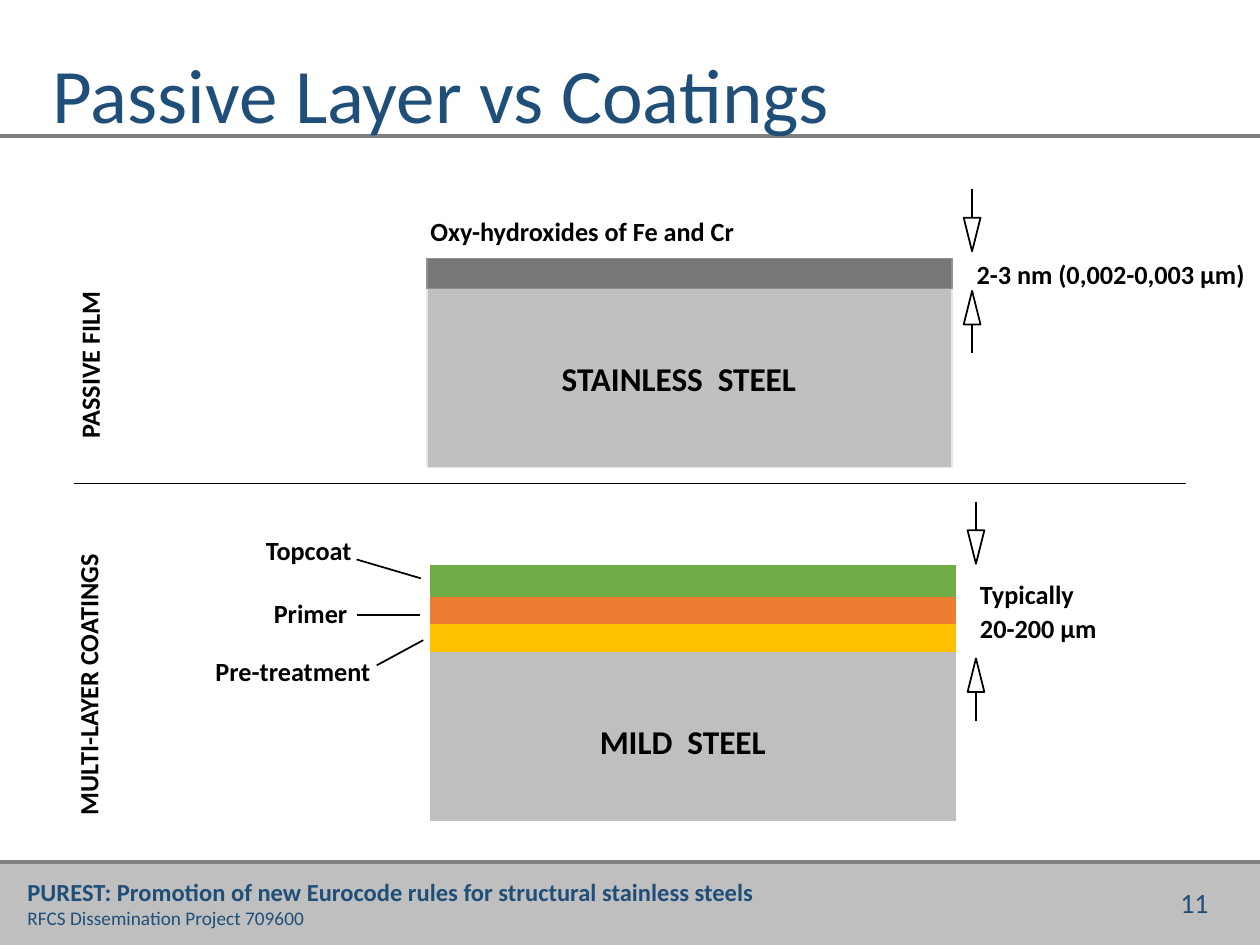
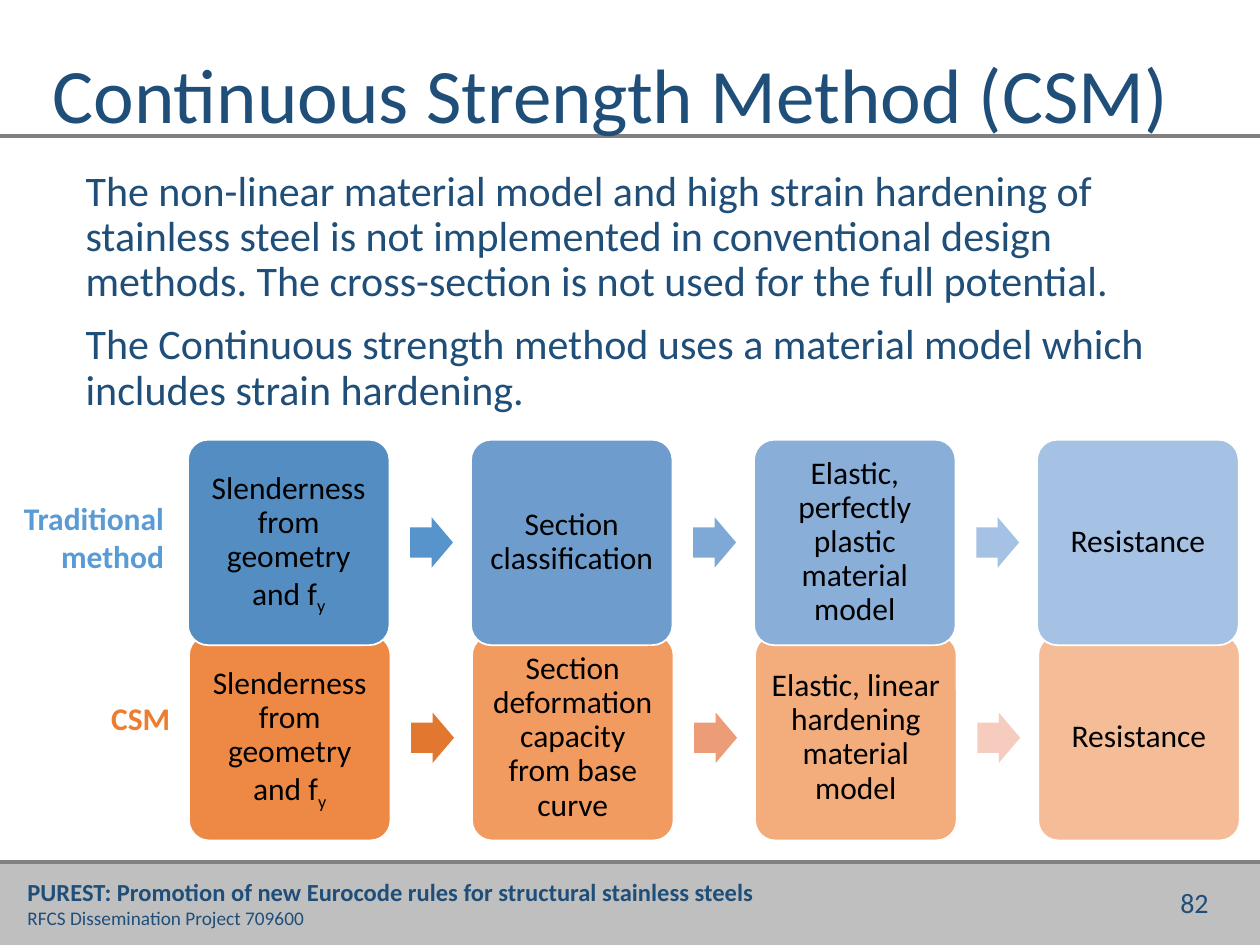
from dataclasses import dataclass

from lxml import etree
from pptx import Presentation
from pptx.dml.color import RGBColor
from pptx.enum.shapes import MSO_CONNECTOR, MSO_SHAPE
from pptx.enum.text import MSO_ANCHOR, MSO_AUTO_SIZE, PP_ALIGN
from pptx.oxml.ns import qn
from pptx.util import Pt

LEFT, CENTER, RIGHT = PP_ALIGN.LEFT, PP_ALIGN.CENTER, PP_ALIGN.RIGHT
TOP, MIDDLE = MSO_ANCHOR.TOP, MSO_ANCHOR.MIDDLE
FIT = MSO_AUTO_SIZE.SHAPE_TO_FIT_TEXT
STRAIGHT = MSO_CONNECTOR.STRAIGHT
RECT, ROUNDED, ARROW = MSO_SHAPE.RECTANGLE, MSO_SHAPE.ROUNDED_RECTANGLE, MSO_SHAPE.RIGHT_ARROW


@dataclass(frozen=True)
class Theme:
    font: str = "Calibri"
    navy: str = "1F4E79"
    black: str = "000000"
    white: str = "FFFFFF"
    band: str = "BFBFBF"
    rule: str = "808080"
    blue: str = "5B9BD5"
    orange: str = "ED7D31"
    title: int = 44
    body: int = 24
    steel: int = 19
    flow: int = 18
    page: int = 16
    label: int = 15
    footer: int = 14
    small: int = 11


T = Theme()
WIDTH, HEIGHT = 720, 540


def rgb(value):
    return RGBColor.from_string(value)


def apply(target, formats):
    for name, value in formats.items():
        setattr(target, name, value)


def add_run(p, text, size, color, bold=False):
    r = p.add_run()
    r.text = text
    apply(r.font, {"name": T.font, "size": Pt(size), "bold": bold})
    r.font.color.rgb = rgb(color)
    return r


def frame_text(sp, inset=None, wrap=True, anchor=TOP, fit=None):
    tf = sp.text_frame
    apply(tf, {"word_wrap": wrap, "vertical_anchor": anchor})
    if inset is not None:
        sides = ("left", "right", "top", "bottom")
        apply(tf, {f"margin_{side}": Pt(inset) for side in sides})
    if fit is not None:
        tf.auto_size = fit
    return tf


def write(tf, lines, size, color, bold=False, **formats):
    for i, line in enumerate(lines):
        p = tf.paragraphs[0] if i == 0 else tf.add_paragraph()
        apply(p, formats)
        add_run(p, line, size, color, bold)


def text_box(s, box, lines, size, color, bold=False, wrap=True, **formats):
    sp = s.shapes.add_textbox(*map(Pt, box))
    tf = frame_text(sp, wrap=wrap)
    write(tf, lines, size, color, bold, **formats)
    return tf


def paint(sp, fill, line=None, width=0.75):
    sp.shadow.inherit = False
    sp.fill.solid()
    sp.fill.fore_color.rgb = rgb(fill)
    if line:
        sp.line.color.rgb = rgb(line)
        sp.line.width = Pt(width)
    else:
        sp.line.fill.background()


def shape(s, kind, box, fill, line=None, width=0.75):
    sp = s.shapes.add_shape(kind, *map(Pt, box))
    paint(sp, fill, line, width)
    return sp


def rule(s, x1, y1, x2, y2, color=T.black, width=1):
    c = s.shapes.add_connector(STRAIGHT, Pt(x1), Pt(y1), Pt(x2), Pt(y2))
    c.line.color.rgb = rgb(color)
    c.line.width = Pt(width)
    etree.SubElement(c._element.spPr, qn("a:effectLst"))


def base_slide(prs, title, number):
    s = prs.slides.add_slide(prs.slide_layouts[6])
    band_top = 492.5
    shape(s, RECT, (0, band_top, WIDTH, HEIGHT - band_top), T.band, T.band, 1)
    tf = text_box(s, (8.6, 497.5, 433, 37.5),
                  ["PUREST: Promotion of new Eurocode rules for structural stainless steels"],
                  T.footer, T.navy, True, wrap=False)
    add_run(tf.add_paragraph(), "RFCS Dissemination Project 709600", T.small, T.navy)
    text_box(s, (535.7, 502.5, 162, 29), [str(number)], T.page, T.navy, alignment=RIGHT)
    for y in (band_top, 77.8):
        rule(s, 0, y, WIDTH, y, T.rule, 2)
    text_box(s, (23, 28.8, 673, 49), [title], T.title, T.navy, line_spacing=0.9)
    return s


def label(s, box, text, align=CENTER, size=T.label, fill=T.white, rotation=0):
    sp = s.shapes.add_textbox(*map(Pt, box))
    if fill:
        sp.fill.solid()
        sp.fill.fore_color.rgb = rgb(fill)
    sp.rotation = rotation
    tf = frame_text(sp, inset=0, wrap=False, fit=FIT)
    write(tf, [text], size, T.black, True, alignment=align)


def gauge_arrow(s, x, tail, direction):
    tip = tail + 35.6 * direction
    base = tip - 19.2 * direction
    rule(s, x, tail, x, base)
    outline = s.shapes.build_freeform(Pt(x - 4.8), Pt(base))
    outline.add_line_segments([(Pt(x), Pt(tip)), (Pt(x + 4.8), Pt(base))], close=True)
    paint(outline.convert_to_shape(), T.white, T.black, 1)


def steel_panel(s, box, panel):
    x, y, w, h = box
    shape(s, RECT, box, panel["fill"], panel["edge"])
    for i, (fill, edge) in enumerate(panel["layers"]):
        shape(s, RECT, (x, y - 15.85 * i, w, 17.3), fill, edge)
    label(s, (x + w / 2 - 96, y + 57, 180, 23), panel["steel"], size=T.steel, fill=None)
    text, dx, mid, length = panel["side"]
    label(s, (x + dx - length / 2, y + mid - 9, length, 18), text, rotation=270)
    for text, dx, dy, width, align in panel["labels"]:
        label(s, (x + dx, y + dy, width, 18), text, align)
    for x1, y1, x2, y2 in panel["leaders"]:
        rule(s, x + x1, y + y1, x + x2, y + y2)
    for tail, direction in zip(panel["tails"], (1, -1)):
        gauge_arrow(s, x + 311.5, y + tail, direction)


PASSIVE_FILM = {
    "fill": "C0C0C0", "edge": "E6E6E6",
    "layers": [("777777", "919191")],
    "steel": "STAINLESS  STEEL",
    "side": ("PASSIVE FILM", -193, 61, 85),
    "labels": [("Oxy-hydroxides of Fe and Cr", 2, -24.5, 207, LEFT),
               ("2-3 nm (0,002-0,003 µm)", 305.4, 0, 170.6, CENTER)],
    "leaders": [],
    "tails": (-39.6, 54.2),
}
COATINGS = {
    "fill": T.band, "edge": "C0C0C0",
    "layers": [(c, c) for c in ("FFC000", T.orange, "70AD47")],
    "steel": "MILD  STEEL",
    "side": ("MULTI-LAYER COATINGS", -196, 36.3, 150.5),
    "labels": [("Topcoat", -95, -49.7, 49.7, RIGHT),
               ("Primer", -92.8, -13.7, 48.2, CENTER),
               ("Pre-treatment", -123.8, 19.4, 89.3, RIGHT),
               ("Typically", 308.9, -24.5, 63.4, CENTER),
               ("20-200 µm", 310.4, -5, 73.4, CENTER)],
    "leaders": [(-42.4, -35.3, -5.7, -24.5),
                (-42.4, -3.6, -6.4, -3.6),
                (-30.9, 25.2, -4.3, 10.8)],
    "tails": (-68.4, 56.8),
}


def coatings_slide(prs):
    s = base_slide(prs, "Passive Layer vs Coatings", 11)
    steel_panel(s, (244, 147.6, 300, 119.5), PASSIVE_FILM)
    steel_panel(s, (246.2, 355, 300, 113.8), COATINGS)
    rule(s, 42.5, 276.5, 677.5, 276.5, width=0.5)


def set_alpha(sp, percent):
    color = sp._element.spPr.find(qn("a:solidFill"))[0]
    etree.SubElement(color, qn("a:alpha")).set("val", str(percent * 1000))


def flow_row(s, box, row):
    x, y, w, h = box
    step = 161.75
    for i, (text, subscript) in enumerate(row["steps"]):
        left = x + step * i
        card = shape(s, ROUNDED, (left, y, w, h), row["cards"][i], T.white, 1)
        card.adjustments[0] = 0.1
        if row["alphas"]:
            set_alpha(card, row["alphas"][i])
        tf = frame_text(card, inset=5, anchor=MIDDLE)
        write(tf, [text], T.flow, T.black, alignment=CENTER, line_spacing=0.9)
        if subscript:
            r = add_run(tf.paragraphs[0], subscript, T.flow, T.black)
            r.font._element.set("baseline", "-25000")
        if i < len(row["arrows"]):
            arrow = shape(s, ARROW, (left + 127, y + 44.3, 24.5, 28.8), row["arrows"][i])
            arrow.adjustments[0] = 0.6
            arrow.adjustments[1] = 0.5
    dx, dy = row["name_offset"]
    text_box(s, (x + dx, y + dy, 100.8, 28.8), row["name"], T.flow, row["color"],
             True, alignment=RIGHT)


SLENDERNESS = ("Slenderness from geometry and f", "y")
CSM = {
    "name": ["CSM"], "color": T.orange, "name_offset": (-104.4, 33),
    "steps": [SLENDERNESS,
              ("Section deformation capacity from base curve", ""),
              ("Elastic, linear hardening material model", ""),
              ("Resistance", "")],
    "cards": [T.orange] * 4,
    "alphas": (90, 77, 63, 50),
    "arrows": ("E2772F", "EC9D77", "F6CCBF"),
}
TRADITIONAL = {
    "name": ["Traditional", "method"], "color": T.blue, "name_offset": (-107.4, 30.2),
    "steps": [SLENDERNESS,
              ("Section classification", ""),
              ("Elastic, perfectly plastic material model", ""),
              ("Resistance", "")],
    "cards": ("538DC1", "6E9DCD", "89AFD8", "A5C1E3"),
    "alphas": (),
    "arrows": ("5794CB", "7EA9D7", "A5C1E3"),
}


def method_slide(prs):
    s = base_slide(prs, "Continuous Strength Method (CSM)", 82)
    text_box(s, (41.8, 93.6, 637.2, 380), [
        "The non-linear material model and high strain hardening of stainless steel is not "
        "implemented in conventional design methods. The cross-section is not used for the "
        "full potential.",
        "The Continuous strength method uses a material model which includes strain hardening.",
    ], T.body, T.navy, line_spacing=0.9, space_before=Pt(10))
    flow_row(s, (108, 362.9, 115.2, 117.4), CSM)
    flow_row(s, (107.4, 251.3, 115.2, 117.4), TRADITIONAL)


def main():
    prs = Presentation()
    apply(prs, {"slide_width": Pt(WIDTH), "slide_height": Pt(HEIGHT)})
    coatings_slide(prs)
    method_slide(prs)
    prs.save("out.pptx")


if __name__ == "__main__":
    main()
